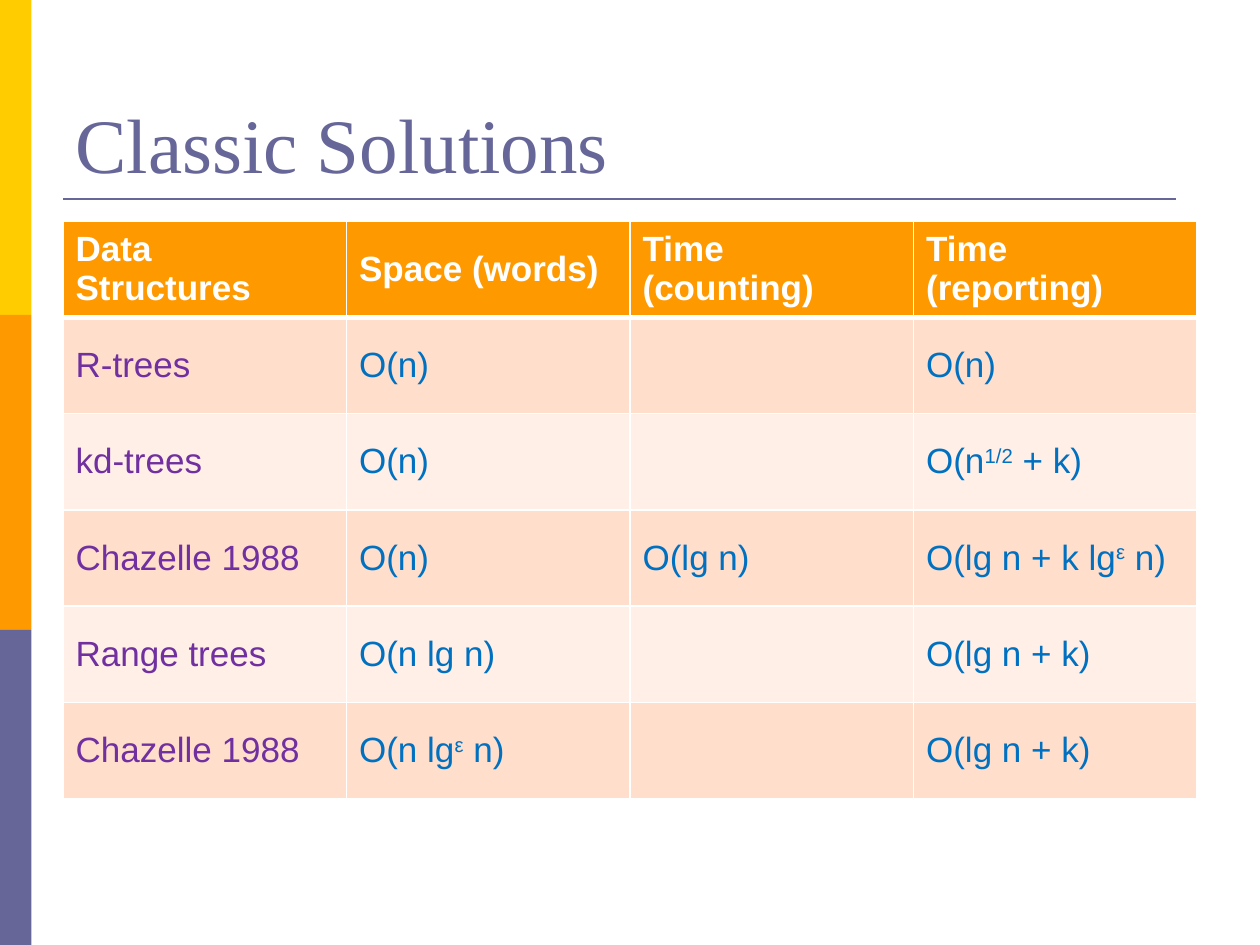
from lxml.etree import fromstring
from pptx import Presentation
from pptx.dml.color import RGBColor
from pptx.enum.shapes import MSO_CONNECTOR, MSO_SHAPE
from pptx.enum.text import MSO_ANCHOR, PP_ALIGN
from pptx.oxml.ns import nsdecls, qn
from pptx.util import Pt

SCALE = 914400 / 126
WHITE, SLATE, ORANGE, GOLD = "FFFFFF", "666699", "FF9900", "FFCC00"
PURPLE, BLUE = "7030A0", "0070C0"
BANDS = ["FFDECC", "FFEFE7"]

# Text between carets is raised
ROWS = [
    ["Data Structures", "Space (words)", "Time (counting)", "Time (reporting)"],
    ["R-trees", "O(n)", "", "O(n)"],
    ["kd-trees", "O(n)", "", "O(n^1/2^ + k)"],
    ["Chazelle 1988", "O(n)", "O(lg n)", "O(lg n + k lg^ε^ n)"],
    ["Range trees", "O(n lg n)", "", "O(lg n + k)"],
    ["Chazelle 1988", "O(n lg^ε^ n)", "", "O(lg n + k)"],
]


def px(*vals):
    return [round(val * SCALE) for val in vals]


def rgb(code):
    return RGBColor.from_string(code)


def style(run, face, size, color, bold=False):
    font = run.font
    font.name, font.size, font.bold = face, Pt(size), bold
    font.color.rgb = rgb(color)


def add_title(slide, text):
    title = slide.shapes.title
    title.left, title.top, title.width, title.height = px(63, 38, 1134, 157)
    frame = title.text_frame
    frame.text = text
    frame.vertical_anchor = MSO_ANCHOR.BOTTOM
    para = frame.paragraphs[0]
    para.alignment = PP_ALIGN.LEFT
    style(para.runs[0], "Times New Roman", 44, SLATE)


def add_bar(slide, top, color):
    bar = slide.shapes.add_shape(MSO_SHAPE.RECTANGLE, *px(0, top, 31.5, 315))
    bar.shadow.inherit = False
    bar.fill.solid()
    bar.fill.fore_color.rgb = rgb(color)
    bar.line.fill.background()


def add_rule(slide, left, right, y):
    rule = slide.shapes.add_connector(
        MSO_CONNECTOR.STRAIGHT, *px(left, y, right, y))
    rule.line.color.rgb = rgb(SLATE)
    rule.line.width = Pt(1.5)
    props = rule._element.spPr
    props.append(props.makeelement(qn("a:effectLst"), {}))


def set_edges(cell, top, base):
    props = cell._tc.get_or_add_tcPr()
    edges = [("lnL", 1), ("lnR", 1), ("lnT", top), ("lnB", base)]
    for pos, (tag, width) in enumerate(edges):
        props.insert(pos, fromstring(
            f'<a:{tag} {nsdecls("a")} w="{Pt(width)}"><a:solidFill>'
            f'<a:srgbClr val="{WHITE}"/></a:solidFill></a:{tag}>'))


def fill_cell(cell, text, fill, color, bold):
    cell.fill.solid()
    cell.fill.fore_color.rgb = rgb(fill)
    cell.vertical_anchor = MSO_ANCHOR.MIDDLE
    if not text:
        return
    para = cell.text_frame.paragraphs[0]
    for pos, part in enumerate(text.split("^")):
        run = para.add_run()
        run.text = part
        style(run, "Arial", 20, color, bold)
        if pos % 2:
            run.font._element.set("baseline", "30000")


def add_grid(slide, rows):
    count = len(rows)
    grid = slide.shapes.add_table(
        count, len(rows[0]), *px(63, 221, 1134, 578)).table
    for r, row in enumerate(rows):
        head = r == 0
        for c, text in enumerate(row):
            cell = grid.cell(r, c)
            fill = ORANGE if head else BANDS[(r - 1) % 2]
            color = WHITE if head else PURPLE if c == 0 else BLUE
            fill_cell(cell, text, fill, color, head)
            set_edges(cell, 3 if r == 1 else 1, 3 if head else 1)


def main():
    deck = Presentation()
    deck.slide_width, deck.slide_height = px(1260, 945)
    slide = deck.slides.add_slide(deck.slide_layouts[5])

    # Side bars and rule under the title
    for pos, color in enumerate([GOLD, ORANGE, SLATE]):
        add_bar(slide, pos * 315, color)
    add_rule(slide, 63, 1176, 199)

    # Title and comparison table
    add_title(slide, "Classic Solutions")
    add_grid(slide, ROWS)
    deck.save("out.pptx")


if __name__ == "__main__":
    main()
